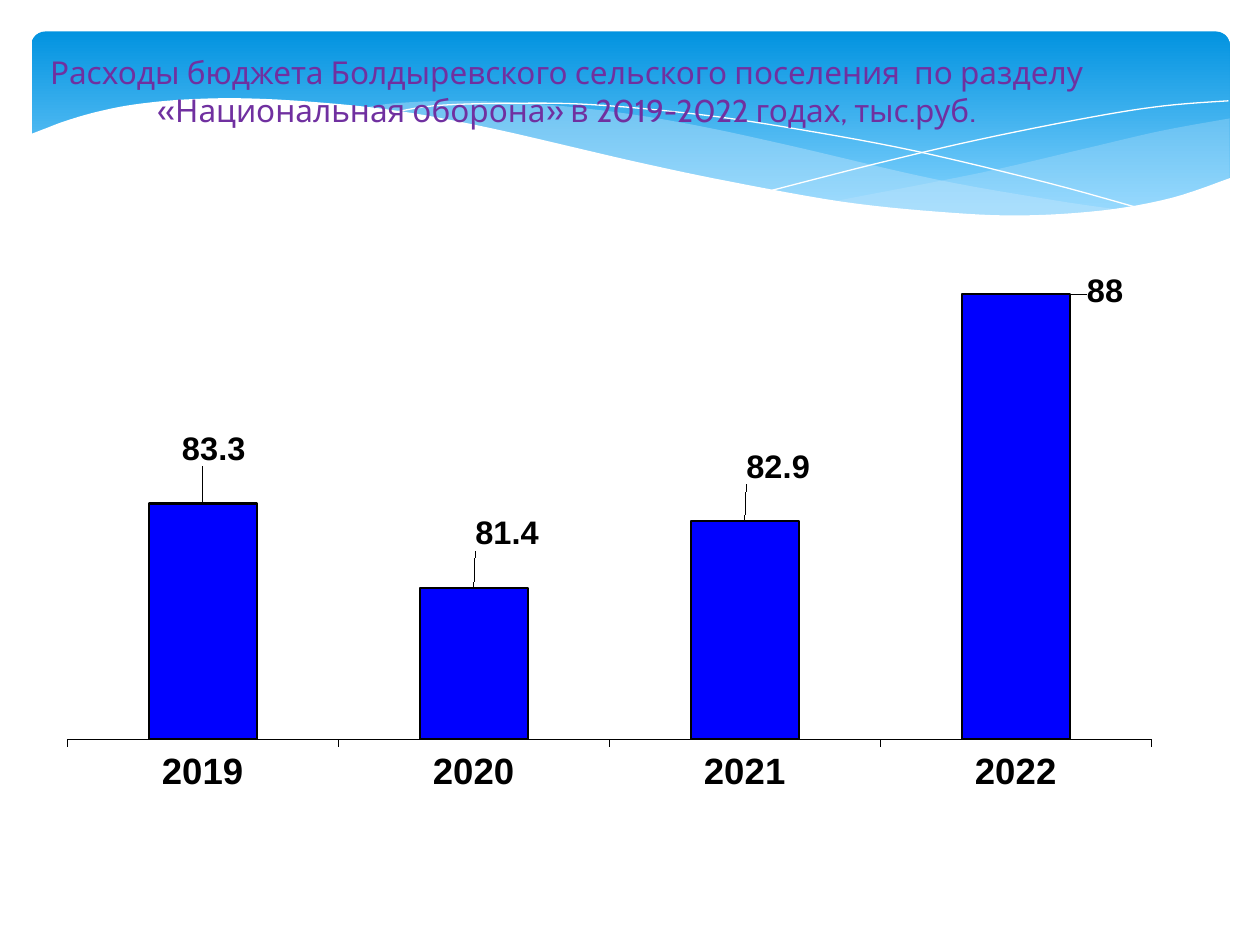
from lxml import etree
from pptx import Presentation, util as u
from pptx.chart.data import CategoryChartData
from pptx.dml.color import RGBColor
from pptx.enum import chart as ch, shapes, text
from pptx.oxml.ns import qn

COLORS = {"sky": "0293E0", "pale": "83D3FE", "mist": "C6E7FC", "white": "FFFFFF",
          "title": "7030A0", "bar": "0000FF", "ink": "000000"}
COLS, ROWS = 100, 75
BACK_TOP = [(97.6, 9.4), (92.1, 10.4), (86.1, 11.8), (77.9, 13.7), (66.1, 16)]
BACK_BOTTOM = [(66.1, 16), (71.9, 16.7), (76.9, 17.1), (81.4, 17.2),
               (86.3, 17), (90.5, 16.3), (94.2, 15.4), (97.6, 14.1)]
FRONT_TOP = [(89.3, 16.7), (83.7, 15.9), (74.1, 14.2), (62.9, 11.6), (55.5, 10),
             (48.9, 8.9), (42, 8.2), (36.1, 8), (31.3, 8.2), (28.6, 8.6)]
FRONT_BOTTOM = [(28.6, 8.6), (36.2, 9.7), (44.9, 11.6), (56.6, 14.3), (65, 15.8),
                (72.2, 16.8), (78.5, 17.2), (83.8, 17.2), (89.3, 16.7)]
FALLING_LINE = [(30.9, 9), (34.4, 8.4), (40.1, 8.2), (46.9, 8.3), (55.6, 9.1),
                (63.6, 10.3), (72.7, 12), (83.1, 14.5), (90.7, 16.6)]
RISING_LINE = [(61.3, 15.1), (69.5, 13), (77.6, 11.1), (86.6, 9.3), (92.4, 8.4), (97.5, 8)]
WHITE_EDGE = [(97.7, 14.1), (93, 15.7), (87.5, 16.7), (80.9, 17.1), (74.4, 16.8),
              (66.8, 16), (57.9, 14.4), (50.3, 12.8), (39.1, 10.2), (31.6, 8.8),
              (25, 8.1), (19.3, 7.8), (14.6, 7.9), (10.6, 8.3), (7.6, 8.9),
              (5.2, 9.6), (3.6, 10.2), (2.3, 10.7)]


def smooth(knots, steps=6):
    ends = [knots[0], *knots, knots[-1]]
    points = [knots[0]]
    for a, b, c, d in zip(ends, ends[1:], ends[2:], ends[3:]):
        for i in range(1, steps + 1):
            t = i / steps
            points.append(tuple(
                q + t * (r - p) / 2 + t * t * (p - 2.5 * q + 2 * r - s / 2)
                + t ** 3 * (3 * q - p - 3 * r + s) / 2
                for p, q, r, s in zip(a, b, c, d)))
    return points


class Deck:
    font = "Arial"

    def __init__(self, prs):
        self.prs = prs
        self.s = prs.slides.add_slide(prs.slide_layouts[6])

    def rgb(self, name):
        return RGBColor.from_string(COLORS[name])

    def at(self, col, row):
        return round(self.prs.slide_width * col / COLS), round(self.prs.slide_height * row / ROWS)

    def box(self, col, row, cols, rows):
        return *self.at(col, row), *self.at(cols, rows)

    def style(self, font, size, color, name=None, bold=None):
        font.size, font.name, font.bold = u.Pt(size), name or self.font, bold
        font.color.rgb = self.rgb(color)

    def banner(self, *box):
        sp = self.s.shapes.add_shape(shapes.MSO_SHAPE.ROUNDED_RECTANGLE, *self.box(*box))
        sp.adjustments[0] = 0.07
        sp.shadow.inherit = False
        sp.line.fill.background()
        sp.fill.gradient()
        sp.fill.gradient_angle = 270
        for stop, color, place in zip(sp.fill.gradient_stops, ("sky", "pale"), (0, 0.9)):
            stop.color.rgb, stop.position = self.rgb(color), place

    def wave(self, points, fill=None, alpha=None):
        points = [self.at(*p) for p in points]
        builder = self.s.shapes.build_freeform(*points[0], scale=1)
        builder.add_line_segments(points[1:], close=fill is not None)
        sp = builder.convert_to_shape()
        sp.shadow.inherit = False
        if fill is None:
            sp.fill.background()
            sp.line.color.rgb, sp.line.width = self.rgb("white"), 0
            return
        sp.line.fill.background()
        sp.fill.solid()
        sp.fill.fore_color.rgb = self.rgb(fill)
        if alpha:
            color = sp.fill._xPr.find(".//" + qn("a:srgbClr"))
            etree.SubElement(color, qn("a:alpha"), val=str(alpha * 1000))

    def title(self, words, *box):
        tf = self.s.shapes.add_textbox(*self.box(*box)).text_frame
        tf.word_wrap = True
        tf.margin_left = tf.margin_right = tf.margin_top = tf.margin_bottom = 0
        p = tf.paragraphs[0]
        p.text, p.alignment = words, text.PP_ALIGN.CENTER
        self.style(p.font, 18, "title", "Cabin")

    def layout(self, parent, index, **values):
        outer = etree.Element(qn("c:layout"))
        manual = etree.SubElement(outer, qn("c:manualLayout"))
        for tag, value in values.items():
            etree.SubElement(manual, qn("c:" + tag), val=str(value))
        for old in parent.findall(qn("c:layout")):
            parent.remove(old)
        parent.insert(index, outer)

    def columns(self, values, shifts, low, high, *box):
        data = CategoryChartData()
        data.categories = list(values)
        data.add_series("Series 1", values.values())
        chart = self.s.shapes.add_chart(
            ch.XL_CHART_TYPE.COLUMN_CLUSTERED, *self.box(*box), data).chart
        chart.has_legend = chart.has_title = False
        self.style(chart.font, 20.9, "ink", bold=True)
        axis = chart.value_axis
        axis.minimum_scale, axis.maximum_scale = low, high
        axis.has_major_gridlines = axis.visible = False
        axis = chart.category_axis
        axis.tick_label_position = ch.XL_TICK_LABEL_POSITION.LOW
        axis.major_tick_mark = ch.XL_TICK_MARK.OUTSIDE
        axis.format.line.color.rgb, axis.format.line.width = self.rgb("ink"), u.Pt(0.29)
        self.style(axis.tick_labels.font, 20.9, "ink", bold=True)
        plot = chart.plots[0]
        plot.gap_width, plot.vary_by_categories = 150, False
        series = plot.series[0]
        series.format.fill.solid()
        series.format.fill.fore_color.rgb = self.rgb("bar")
        series.format.line.color.rgb, series.format.line.width = self.rgb("ink"), u.Pt(1.16)
        series.data_labels.show_value = True
        self.style(series.data_labels.font, 18.6, "ink", bold=True)
        for i, (x, y) in enumerate(shifts):
            label = series.points[i].data_label
            self.style(label.font, 18.6, "ink", bold=True)
            label.position = ch.XL_LABEL_POSITION.OUTSIDE_END
            self.layout(label._dLbl, 1, x=x, y=y)
        self.layout(chart._chartSpace.chart.plotArea, 0, layoutTarget="inner", xMode="edge",
                    yMode="edge", x=0.014, y=0.022, w=0.97, h=0.839)


def main():
    prs = Presentation()
    prs.slide_width, prs.slide_height = u.Inches(10), u.Inches(7.5)
    deck = Deck(prs)
    deck.banner(2.5, 2.5, 95.1, 15.6)
    deck.wave(smooth(BACK_TOP) + smooth(BACK_BOTTOM), "mist", 29)
    deck.wave(smooth(FRONT_TOP) + smooth(FRONT_BOTTOM), "mist", 40)
    deck.wave(smooth(FALLING_LINE))
    deck.wave(smooth(RISING_LINE))
    deck.wave(smooth(WHITE_EDGE) + [(2.3, 22.4), (97.7, 22.4)], "white")
    deck.title("Расходы бюджета Болдыревского сельского поселения  по разделу "
               "«Национальная оборона» в 2019-2022 годах, тыс.руб.", 0, 4.2, 90, 6)
    deck.columns({"2019": 83.3, "2020": 81.4, "2021": 82.9, "2022": 88},
                 [(0.01, -0.05), (0.03, -0.05), (0.03, -0.05), (0.08, 0.03)],
                 78, 90, 4.1, 15.2, 88.7, 50.5)
    prs.save("out.pptx")


if __name__ == "__main__":
    main()
